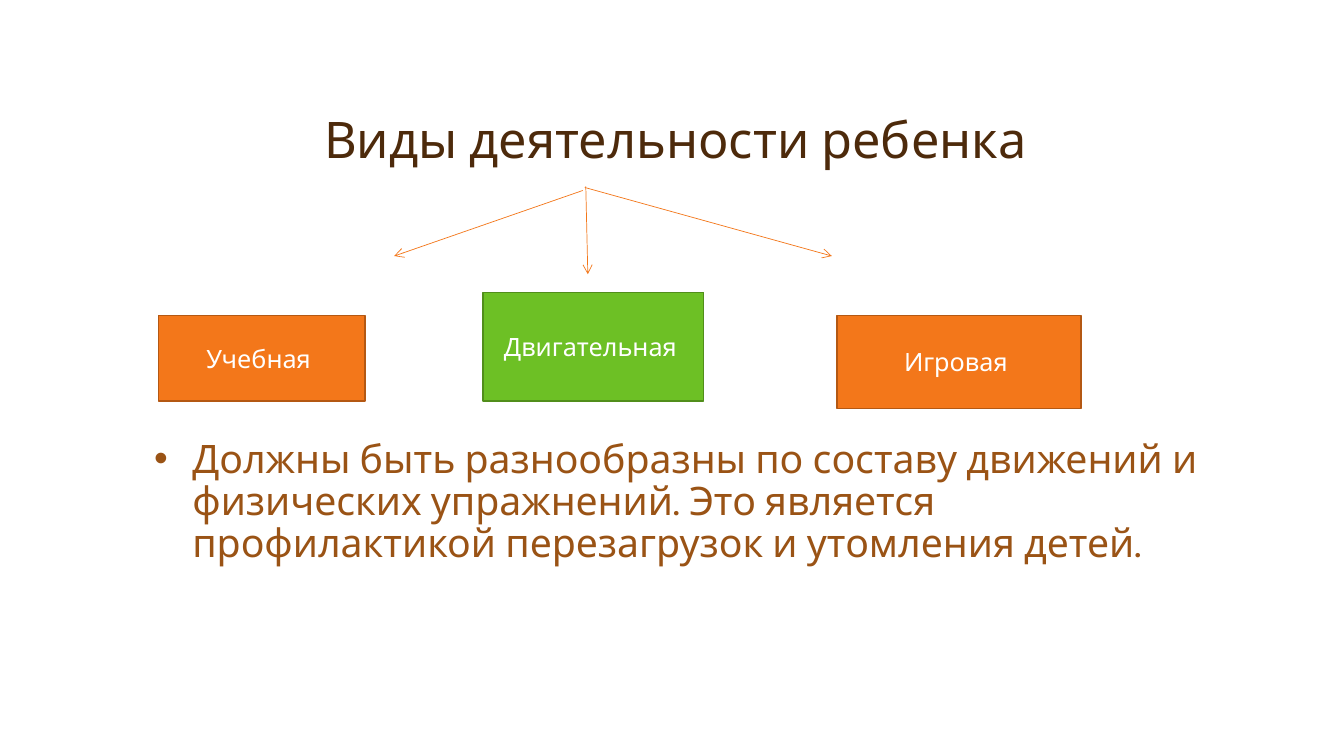
from pptx import Presentation
from pptx.dml.color import RGBColor
from pptx.enum.shapes import MSO_CONNECTOR, MSO_SHAPE
from pptx.enum.text import MSO_ANCHOR as Anchor, PP_ALIGN as Align
from pptx.oxml.ns import qn
from pptx.util import Emu, Pt
from lxml.etree import SubElement

PX = 9144  # EMU in one px, 100 px to the inch
WHITE = RGBColor(0xFF, 0xFF, 0xFF)
DARK_BROWN = RGBColor(0x4D, 0x2A, 0x0B)
BROWN = RGBColor(0x9A, 0x53, 0x15)
ORANGE = RGBColor(0xF3, 0x77, 0x1A)
ORANGE_EDGE = RGBColor(0xB4, 0x58, 0x13)
GREEN = RGBColor(0x6D, 0xC0, 0x25)
GREEN_EDGE = RGBColor(0x51, 0x8E, 0x1B)


def px(*lengths):
    return [Emu(length * PX) for length in lengths]


class ActivitySlide:
    font_name = "Karla"

    def __init__(self, deck):
        self.slide = deck.slides.add_slide(deck.slide_layouts[6])
        self.shapes = self.slide.shapes

    def fill_frame(self, frame, words, size, color, anchor, **paragraph_format):
        frame.word_wrap = True
        frame.vertical_anchor = anchor
        paragraph = frame.paragraphs[0]
        for name, value in paragraph_format.items():
            setattr(paragraph, name, value)
        run = paragraph.add_run()
        run.text = words
        for name, value in {"name": self.font_name, "size": Pt(size)}.items():
            setattr(run.font, name, value)
        run.font.color.rgb = color
        return paragraph

    def text(self, box, words, size, color, anchor, **paragraph_format):
        frame = self.shapes.add_textbox(*px(*box)).text_frame
        return self.fill_frame(frame, words, size, color, anchor,
                               line_spacing=0.9, **paragraph_format)

    def bullet(self, box, words, size, color, margin, hang):
        paragraph = self.text(box, words, size, color, Anchor.TOP)
        properties = paragraph._p.get_or_add_pPr()
        properties.set("marL", str(margin * PX))
        properties.set("indent", str(-hang * PX))
        SubElement(properties, qn("a:buFont"), typeface="Arial")
        SubElement(properties, qn("a:buChar"), char="•")

    def activity(self, box, words, fill, edge):
        block = self.shapes.add_shape(MSO_SHAPE.FLOWCHART_PROCESS, *px(*box))
        block.shadow.inherit = False
        block.fill.solid()
        block.fill.fore_color.rgb = fill
        block.line.color.rgb = edge
        block.line.width = Pt(1)
        self.fill_frame(block.text_frame, words, 18, WHITE, Anchor.MIDDLE,
                        alignment=Align.CENTER)

    def arrow(self, start, end):
        arrow = self.shapes.add_connector(
            MSO_CONNECTOR.STRAIGHT, *px(*start, *end))
        arrow.line.color.rgb = ORANGE
        arrow.line.width = Pt(0.5)
        SubElement(arrow.line._ln, qn("a:tailEnd"), type="arrow")
        SubElement(arrow._element.spPr, qn("a:effectLst"))


def main():
    deck = Presentation()
    deck.slide_width, deck.slide_height = px(1333, 750)
    slide = ActivitySlide(deck)

    slide.text((82, 40, 1176, 133), "Виды деятельности ребенка", 36,
               DARK_BROWN, Anchor.BOTTOM, alignment=Align.CENTER)
    slide.bullet((100, 431, 1100, 220),
                 "Должны быть разнообразны по составу движений и физических "
                 "упражнений. Это является профилактикой перезагрузок и "
                 "утомления детей.", 28, BROWN, margin=81, hang=38)

    for box, activity, fill, edge in (
        ((479, 290, 219, 108), "Двигательная ", GREEN, GREEN_EDGE),
        ((157, 313, 205, 85), "Учебная ", ORANGE, ORANGE_EDGE),
        ((830, 313, 242, 92), "Игровая ", ORANGE, ORANGE_EDGE),
    ):
        slide.activity(box, activity, fill, edge)

    for start, end in (
        ((578, 189), (391, 254)),
        ((581, 185), (583, 272)),
        ((580, 186), (825, 254)),
    ):
        slide.arrow(start, end)

    deck.save("out.pptx")


if __name__ == "__main__":
    main()
